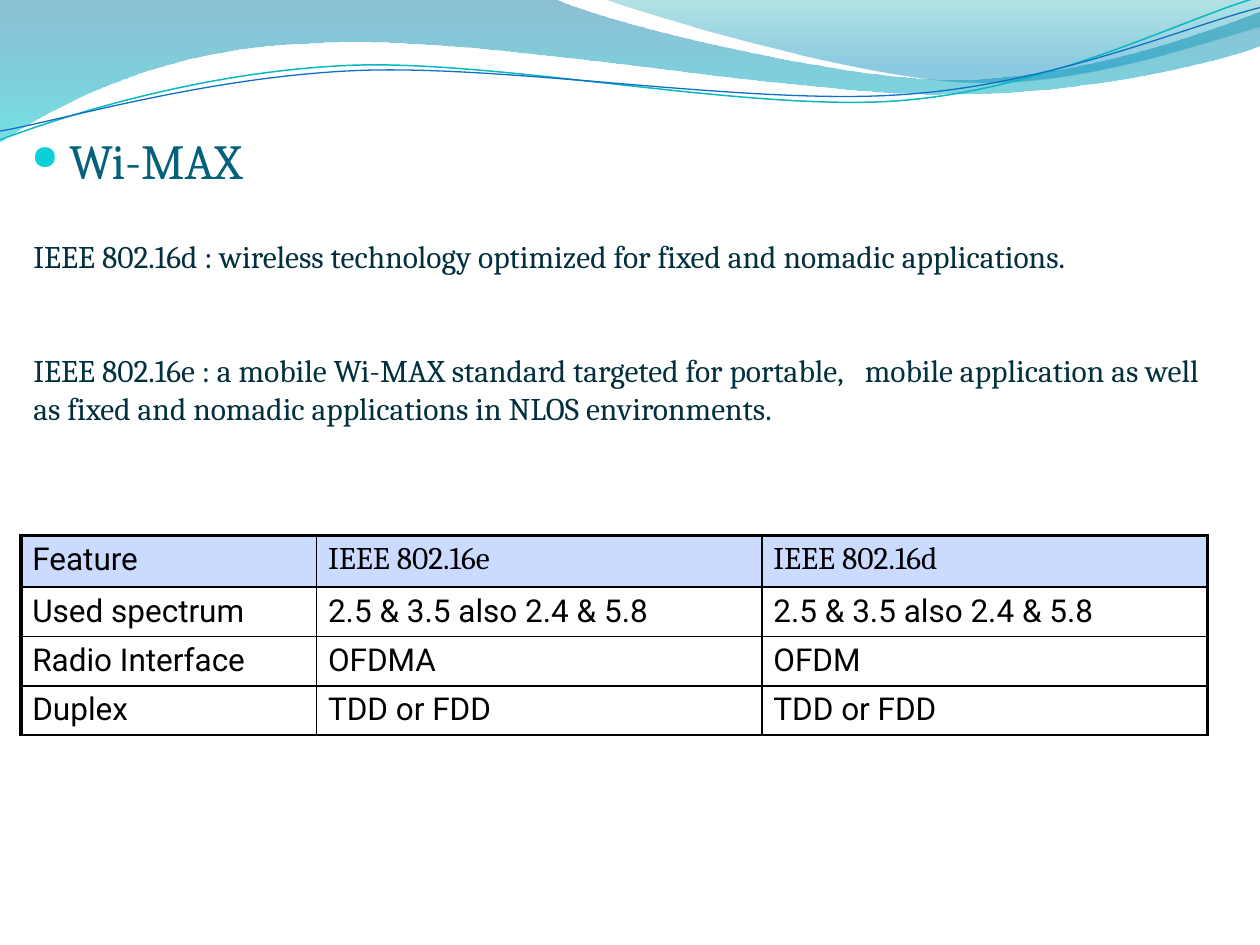
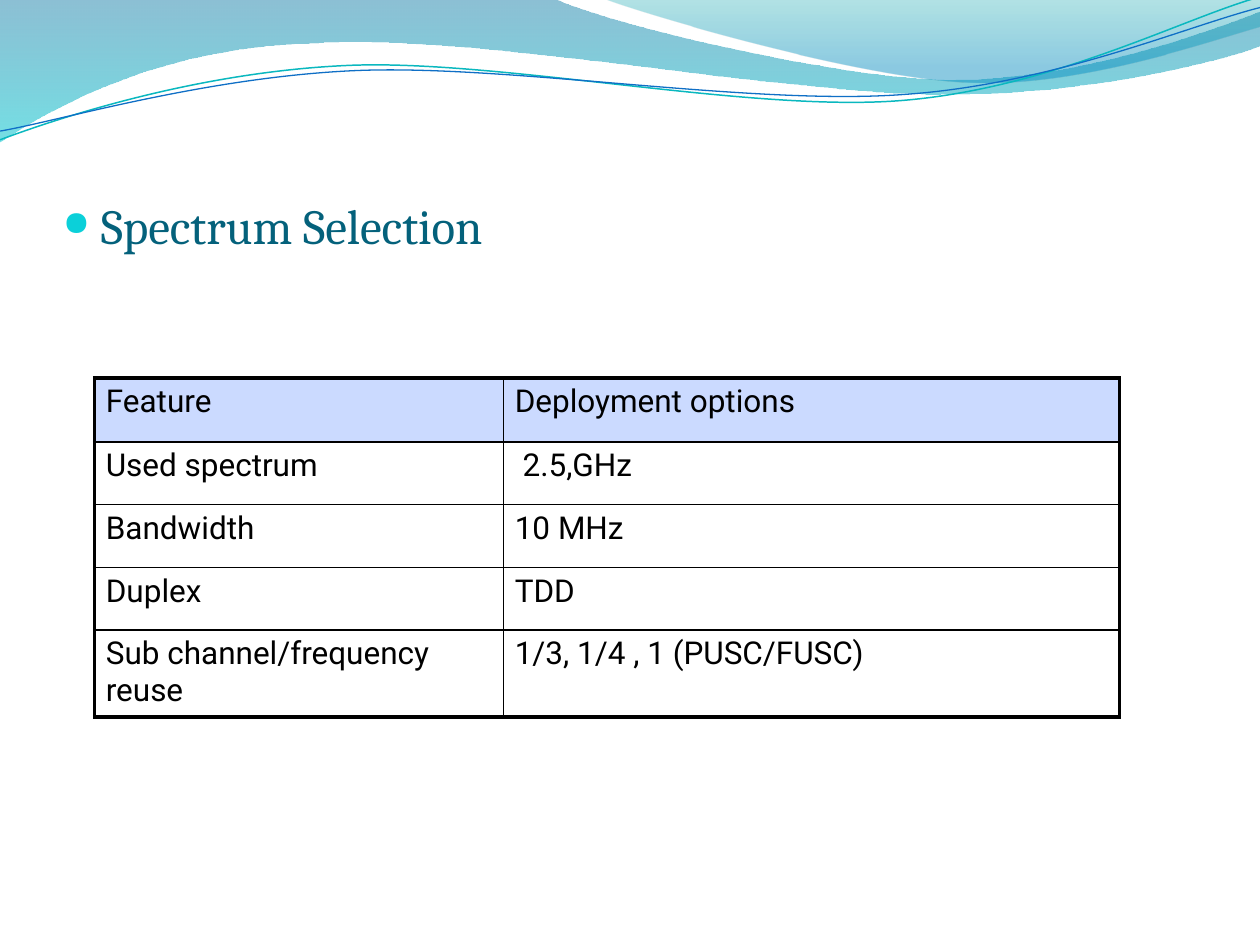
from lxml import etree
from pptx import Presentation
from pptx import util as u
from pptx.dml.color import RGBColor
from pptx.enum import text
from pptx.oxml import ns

COLORS = {
    "title": "04617B", "bullet": "0BD0D9", "body": "02303E",
    "cell_text": "000000", "border": "000000", "header": "CBDAFF",
    "wave_top": "0074A1", "wave_bottom": "00C6CF",
    "crest_top": "00A1A9", "crest_bottom": "008BBF",
    "teal_line": "0AB8BF", "blue_line": "0F6FC6",
}
SERIF, SANS = "Cambria", "Roboto"
THICK, THIN = 2.25, 1

# Outlines in points: a start, then lines (x, y) or curves (x1, y1, x2, y2, x, y).
WAVE = [(0, 0), (316.8, -0.7),
        (342.7, 12.2, 478.1, 45.4, 545.8, 45.4),
        (614.2, 45.4, 689.8, 18.7, 720, 6.5), (720.7, 25.9),
        (707.8, 31.7, 626.4, 54.7, 537.1, 54),
        (447.8, 54, 275, 20.2, 185, 24.5),
        (92.9, 25.9, 33.1, 59.8, -0.7, 81.4), (0, 0)]
CREST = [(344.9, -0.7),
         (366.5, 7.9, 491, 44.6, 553.7, 46.8),
         (616.3, 49.7, 691.9, 23, 720, 15.1), (720, 0), (344.9, -0.7)]
TEAL_LINE = [(0, 79.9),
             (34.6, 67, 113.8, 41, 199.4, 37.4),
             (284.4, 33.8, 427, 64.1, 513.4, 57.6),
             (599.8, 51.1, 675.4, 10.8, 718.6, -1.4)]
BLUE_LINE = [(0, 74.9),
             (33.8, 69.1, 118.1, 43.9, 203.8, 40.3),
             (290.2, 36.7, 429.8, 60.5, 516.2, 54),
             (601.9, 48.2, 677.5, 15.1, 720, 4.3)]


def rgb(name):
    return RGBColor.from_string(COLORS[name])


def sub(parent, tag, **attrs):
    return etree.SubElement(parent, ns.qn(tag), {k: str(v) for k, v in attrs.items()})


def add_outline(s, outline, close):
    """Build a freeform on the end points, then bend its curved segments."""
    ends = [(u.Pt(seg[-2]), u.Pt(seg[-1])) for seg in outline]
    builder = s.shapes.build_freeform(*ends[0])
    builder.add_line_segments(ends[1:], close=close)
    sp = builder.convert_to_shape()
    sp.shadow.inherit = False
    for line, seg in zip(list(sp._element.iter(ns.qn("a:lnTo"))), outline[1:]):
        if len(seg) == 6:
            line.tag = ns.qn("a:cubicBezTo")
            for i in (0, 2):
                pt = sub(line, "a:pt", x=u.Pt(seg[i]) - sp.left, y=u.Pt(seg[i + 1]) - sp.top)
                line.insert(i // 2, pt)
    return sp


def add_gradient_area(s, outline, stops):
    """Fill an outline from top to bottom; stops are (position, colour, opacity %)."""
    sp = add_outline(s, outline, True)
    sp.line.fill.background()
    sp.fill.gradient()
    sp.fill.gradient_angle = 270
    for stop, (position, color, _) in zip(sp.fill.gradient_stops, stops):
        stop.position = position
        stop.color.rgb = rgb(color)
    for clr, (_, _, opacity) in zip(sp._element.iter(ns.qn("a:srgbClr")), stops):
        sub(clr, "a:alpha", val=opacity * 1000)


def add_curve(s, outline, color, width):
    sp = add_outline(s, outline, False)
    sp.fill.background()
    sp.line.color.rgb = rgb(color)
    sp.line.width = u.Pt(width)


def add_waves(s):
    add_gradient_area(s, WAVE, [(0, "wave_top", 45), (1, "wave_bottom", 55)])
    add_gradient_area(s, CREST, [(0, "crest_top", 30), (0.8, "crest_bottom", 45)])
    add_curve(s, TEAL_LINE, "teal_line", 0.85)
    add_curve(s, BLUE_LINE, "blue_line", 0.75)


def add_run(p, words, size, font, color):
    r = p.add_run()
    r.text = words
    r.font.size = u.Pt(size)
    r.font.name = font
    r.font.color.rgb = rgb(color)
    return r


def add_text_frame(s, x, y, w, h):
    tf = s.shapes.add_textbox(u.Pt(x), u.Pt(y), u.Pt(w), u.Pt(h)).text_frame
    tf.word_wrap = True
    return tf


def add_title(s, words, x, y):
    tf = add_text_frame(s, x, y, 648, 90)
    tf.vertical_anchor = text.MSO_ANCHOR.BOTTOM
    tf.margin_left = tf.margin_right = tf.margin_bottom = 0
    p = tf.paragraphs[0]
    add_run(p, words, 28, SERIF, "title")
    pPr = p._p.get_or_add_pPr()
    indent = u.Pt(21.6)
    pPr.set("marL", str(indent))
    pPr.set("indent", str(-indent))
    sub(sub(pPr, "a:buClr"), "a:srgbClr", val=COLORS["bullet"])
    sub(pPr, "a:buSzPct", val=70000)
    sub(pPr, "a:buChar", char="●")


def add_body(s, paragraphs, x, y, w, h, gap):
    """Add paragraphs, each a list of runs; a run of one space is drawn wide."""
    tf = add_text_frame(s, x, y, w, h)
    for i, runs in enumerate(paragraphs):
        p = tf.add_paragraph() if i else tf.paragraphs[0]
        p.space_before = u.Pt(gap if i else 0)
        for words in runs:
            r = add_run(p, words, 18, SERIF, "body")
            if words == " ":
                r._r.get_or_add_rPr().set("spc", "780")


def set_borders(cell, widths):
    """Draw the left, right, top and bottom borders, in that order."""
    tcPr = cell._tc.get_or_add_tcPr()
    for side, width in zip("LRTB", widths):
        ln = sub(tcPr, f"a:ln{side}", w=u.Pt(width))
        sub(sub(ln, "a:solidFill"), "a:srgbClr", val=COLORS["border"])


def add_feature_table(s, x, y, widths, heights, rows, option_font=SANS, bottom=THICK):
    """Add a table; option_font is used for the headers right of the first."""
    tbl = s.shapes.add_table(len(rows), len(widths), u.Pt(x), u.Pt(y),
                             u.Pt(sum(widths)), u.Pt(sum(heights))).table
    tbl.first_row = tbl.horz_banding = False
    for col, width in zip(tbl.columns, widths):
        col.width = u.Pt(width)
    for row, height in zip(tbl.rows, heights):
        row.height = u.Pt(height)
    last_row, last_col = len(rows) - 1, len(widths) - 1
    for i, row in enumerate(rows):
        for j, words in enumerate(row):
            cell = tbl.cell(i, j)
            set_borders(cell, (THICK if j == 0 else THIN,
                               THICK if j == last_col else THIN,
                               THICK if i == 0 else THIN,
                               bottom if i == last_row else THIN))
            if i == 0:
                cell.fill.solid()
                cell.fill.fore_color.rgb = rgb("header")
            else:
                cell.fill.background()
            cell.margin_left = cell.margin_right = u.Pt(6.5)
            cell.margin_top = cell.margin_bottom = u.Pt(3.3)
            font = option_font if i == 0 and j else SANS
            add_run(cell.text_frame.paragraphs[0], words, 18, font, "cell_text")


def add_slide(prs):
    s = prs.slides.add_slide(prs.slide_layouts[6])
    add_waves(s)
    return s


def add_wimax_slide(prs):
    s = add_slide(prs)
    add_title(s, "Wi-MAX", 18, 18)
    add_feature_table(s, 12, 306, [169, 254.5, 254.5], [29.5] + [27.4] * 3, [
        ("Feature", "IEEE 802.16e", "IEEE 802.16d"),
        ("Used spectrum", "2.5 & 3.5 also 2.4 & 5.8", "2.5 & 3.5 also 2.4 & 5.8"),
        ("Radio Interface", "OFDMA", "OFDM"),
        ("Duplex", "TDD or FDD", "TDD or FDD"),
    ], option_font=SERIF, bottom=THIN)
    add_body(s, [
        ["IEEE 802.16d : wireless technology optimized for fixed and nomadic applications."],
        ["IEEE 802.16e : a mobile Wi-MAX standard targeted for portable,", " ",
         "mobile application as well as fixed and nomadic applications "
         "in NLOS environments."],
    ], 12, 132, 690, 138, gap=43.3)


def add_spectrum_slide(prs):
    s = add_slide(prs)
    add_title(s, "Spectrum Selection", 36, 55.5)
    add_feature_table(s, 54, 216, [233.7, 351.9], [36.6] + [35.8] * 3 + [41.8], [
        ("Feature", "Deployment options"),
        ("Used spectrum", " 2.5,GHz"),
        ("Bandwidth", "10 MHz"),
        ("Duplex", "TDD"),
        ("Sub channel/frequency reuse", "1/3, 1/4 , 1 (PUSC/FUSC)"),
    ])


def main():
    prs = Presentation()
    prs.slide_width, prs.slide_height = u.Pt(720), u.Pt(540)
    add_wimax_slide(prs)
    add_spectrum_slide(prs)
    prs.save("out.pptx")


if __name__ == "__main__":
    main()
